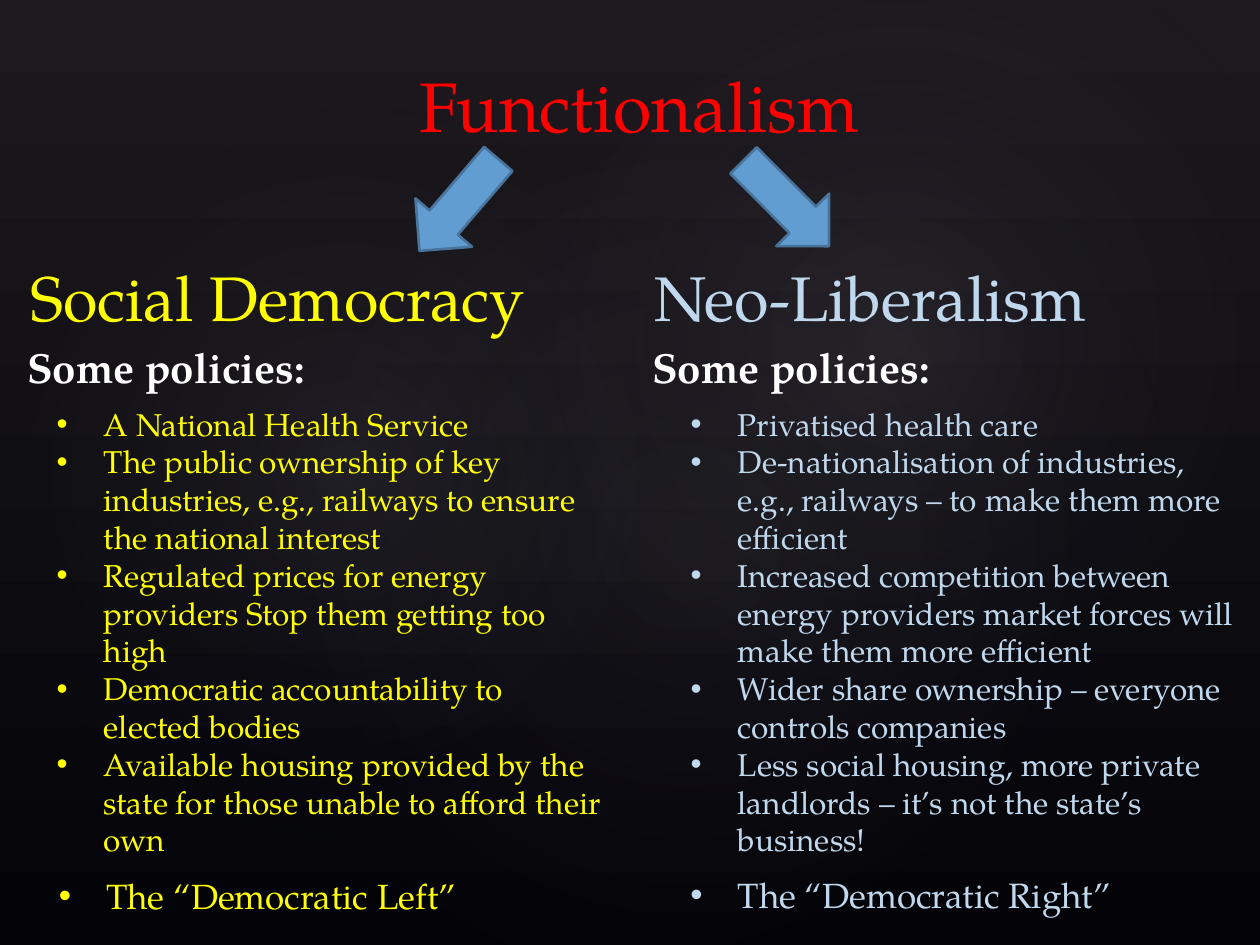
"""Build a slide that sets two branches of functionalism side by side."""
from dataclasses import dataclass

from lxml.etree import SubElement as Sub
from pptx import Presentation
from pptx.dml.color import RGBColor
from pptx.enum.shapes import MSO_SHAPE as Kind
from pptx.enum.text import MSO_ANCHOR as Anchor, MSO_AUTO_SIZE as Fit, PP_ALIGN as Align
from pptx.oxml.ns import qn
from pptx.util import Cm, Pt

FONT = "TeX Gyre Pagella"
RED = RGBColor(0xFF, 0x00, 0x00)
YELLOW = RGBColor(0xFF, 0xFF, 0x00)
PALE = RGBColor(0xC0, 0xD8, 0xED)
WHITE = RGBColor(0xFF, 0xFF, 0xFF)
BLUE = RGBColor(0x62, 0x9D, 0xD1)
EDGE = RGBColor(0x49, 0x74, 0x9B)
TOP = RGBColor(0x1D, 0x19, 0x1E)
BASE = RGBColor(0x04, 0x04, 0x08)
HAZE = RGBColor(0xC4, 0xBC, 0xC6)
NAVY = RGBColor(0x24, 0x28, 0x52)
WIDTH = 11.2
INDENT = Cm(0.95)


@dataclass
class Box:
    left: float
    top: float
    width: float
    height: float

    def place(self) -> list:
        return [Cm(n) for n in (self.left, self.top, self.width, self.height)]


@dataclass
class Glow:
    box: Box
    turn: float
    alpha: int


@dataclass
class Arrow:
    box: Box
    turn: float


@dataclass
class Side:
    name: str
    color: RGBColor
    head: Box
    label: Box
    body: Box
    foot: Box
    items: list[str]
    close: str


GLOWS = [
    Glow(Box(3.81, 2.9, 20.12, 15.85), 328.7, 7),
    Glow(Box(-0.76, 3.25, 15.39, 12.45), 294.3, 8),
    Glow(Box(9.09, 0.33, 18.01, 13.21), 328.7, 8),
]
ARROWS = [
    Arrow(Box(8.03, 3.38, 2.44, 1.5), 130.6),
    Arrow(Box(14.63, 3.35, 2.44, 1.5), 45.1),
]
SIDES = [
    Side("Social Democracy", YELLOW,
         Box(0, 5.08, WIDTH, 1.8), Box(0.3, 6.76, WIDTH, 1.27),
         Box(0.89, 8.03, 11.53, 9.5), Box(0.94, 17.5, WIDTH, 1.12),
         ["A National Health Service",
          "The public ownership of key industries, e.g., railways to ensure the national interest",
          "Regulated prices for energy providers Stop them getting too high",
          "Democratic accountability to elected bodies",
          "Available housing provided by the state for those unable to afford their own"],
         "The “Democratic Left”"),
    Side("Neo-Liberalism", PALE,
         Box(11.94, 5.08, WIDTH, 1.8), Box(12.9, 6.76, WIDTH, 1.27),
         Box(13.67, 8.03, 11.73, 9.5), Box(13.67, 17.48, WIDTH, 1.12),
         ["Privatised health care",
          "De-nationalisation of industries, e.g., railways – to make them more efficient",
          "Increased competition between energy providers market forces will make them more efficient",
          "Wider share ownership – everyone controls companies",
          "Less social housing, more private landlords – it’s not the state’s business!"],
         "The “Democratic Right”"),
]


def write(slide, box: Box, *lines: str, size: int, color: RGBColor, bold: bool = False,
          align=Align.LEFT, bullet: bool = False, holder=None) -> None:
    shape = holder or slide.shapes.add_textbox(*box.place())
    shape.left, shape.top, shape.width, shape.height = box.place()
    frame = shape.text_frame
    frame.text = "\n".join(lines)
    frame.word_wrap = True
    frame.auto_size = Fit.NONE
    frame.vertical_anchor = Anchor.TOP
    for para in frame.paragraphs:
        para.alignment = align
        para.space_before = Pt(0)
        if bullet:
            props = para._p.get_or_add_pPr()
            props.set("marL", str(INDENT))
            props.set("indent", str(-INDENT))
            Sub(props, qn("a:buFont"), typeface="Arial")
            Sub(props, qn("a:buChar"), char="•")
        font = para.font
        font.name, font.size, font.bold = FONT, Pt(size), bold
        font.color.rgb = color


def add_glow(slide, glow: Glow) -> None:
    shape = slide.shapes.add_shape(Kind.OVAL, *glow.box.place())
    shape.rotation = glow.turn
    shape.shadow.inherit = False
    shape.line.fill.background()
    shape.fill.gradient()
    grad = shape._element.spPr.find(qn("a:gradFill"))
    for child in list(grad):
        grad.remove(child)
    stops = Sub(grad, qn("a:gsLst"))
    for pos, color, alpha in ((0, HAZE, glow.alpha), (58, NAVY, 0)):
        stop = Sub(stops, qn("a:gs"), pos=str(pos * 1000))
        tone = Sub(stop, qn("a:srgbClr"), val=str(color))
        Sub(tone, qn("a:alpha"), val=str(alpha * 1000))
    ring = Sub(grad, qn("a:path"), {"path": "circle"})
    Sub(ring, qn("a:fillToRect"), dict.fromkeys("ltrb", "50000"))


def add_arrow(slide, arrow: Arrow) -> None:
    shape = slide.shapes.add_shape(Kind.RIGHT_ARROW, *arrow.box.place())
    shape.rotation = arrow.turn
    shape.shadow.inherit = False
    shape.fill.solid()
    shape.fill.fore_color.rgb = BLUE
    shape.line.color.rgb = EDGE
    shape.line.width = Pt(1.5)


def add_side(slide, side: Side, holder) -> None:
    color = side.color
    write(slide, side.head, side.name, size=36, color=color, align=Align.CENTER)
    write(slide, side.label, "Some policies:", size=24, color=WHITE, bold=True)
    write(slide, side.body, *side.items, size=18, color=color, bullet=True, holder=holder)
    write(slide, side.foot, side.close, size=20, color=color, bullet=True)


def main() -> None:
    deck = Presentation()
    deck.slide_width, deck.slide_height = Cm(25.4), Cm(19.05)
    slide = deck.slides.add_slide(deck.slide_layouts[3])
    title, *bodies = list(slide.placeholders)[:3]
    back = slide.background.fill
    back.gradient()
    back.gradient_angle = 270
    for stop, color in zip(back.gradient_stops, (TOP, BASE)):
        stop.color.rgb = color
    for glow in GLOWS:
        add_glow(slide, glow)
    for holder in (title, *bodies):
        slide.shapes._spTree.append(holder._element)
    write(slide, Box(7.29, 1.14, WIDTH, 1.96), "Functionalism", size=40, color=RED,
          align=Align.CENTER, holder=title)
    for arrow in ARROWS:
        add_arrow(slide, arrow)
    for side, holder in zip(SIDES, bodies):
        add_side(slide, side, holder)
    deck.save("out.pptx")


if __name__ == "__main__":
    main()
